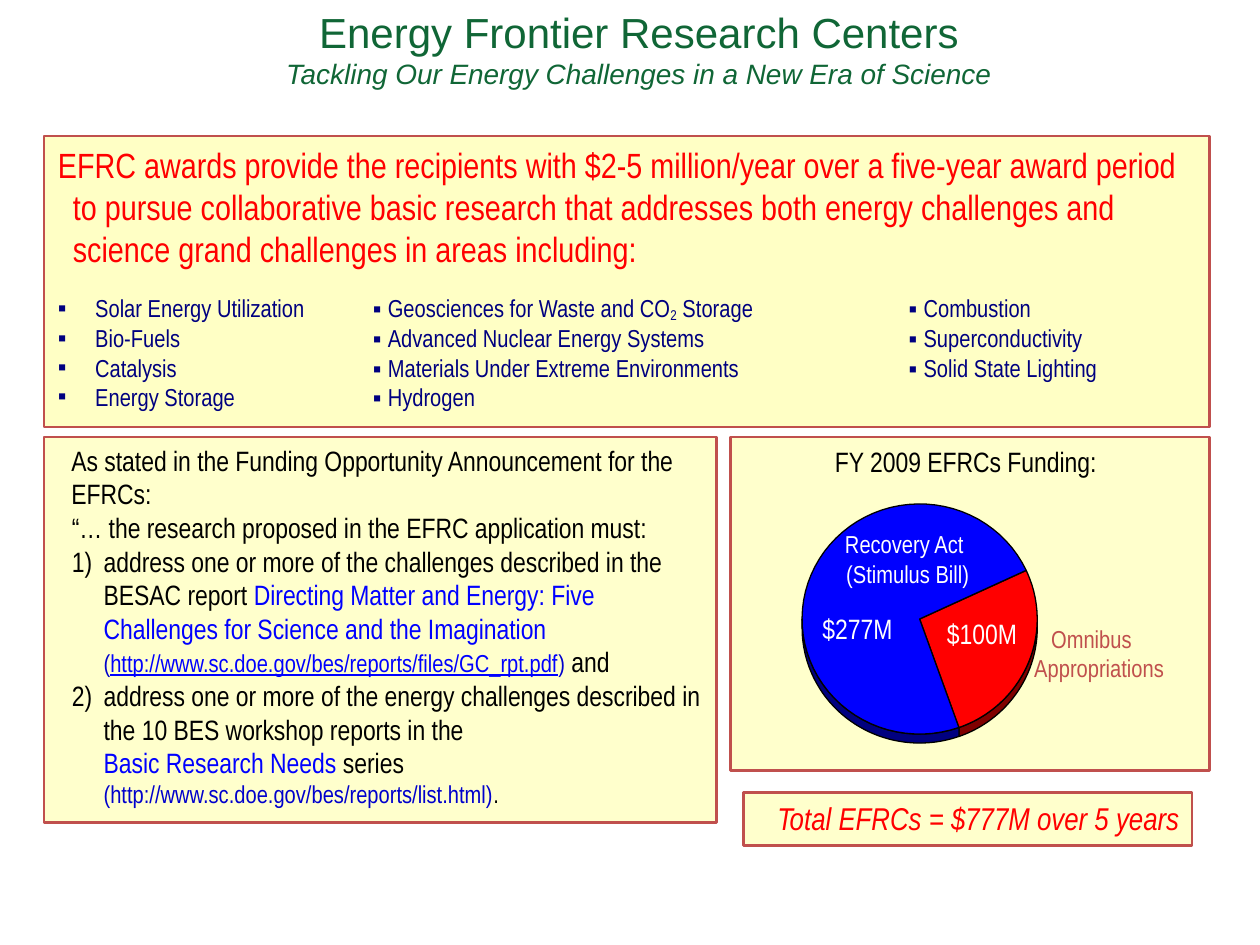
from dataclasses import dataclass
from math import cos, radians, sin

from lxml import etree
from pptx import Presentation
from pptx.dml.color import RGBColor
from pptx.enum.shapes import MSO_SHAPE
from pptx.enum.text import MSO_ANCHOR, PP_ALIGN
from pptx.oxml.ns import qn
from pptx.util import Cm, Pt

RECT = MSO_SHAPE.RECTANGLE
TOP = MSO_ANCHOR.TOP
LEFT, MID, RIGHT = PP_ALIGN.LEFT, PP_ALIGN.CENTER, PP_ALIGN.RIGHT
NARROW, SERIF = "Arial Narrow", "Times New Roman"
HEX = {
    "cream": "FFFFCC", "pale": "FFFFC5", "brick": "C0504D", "green": "106636",
    "red": "FF0000", "maroon": "800000", "navy": "000080", "blue": "0000FF",
    "link": "0000CC", "black": "000000", "white": "FFFFFF",
}


@dataclass
class Bit:
    """A run; None keeps the font of its paragraph."""
    text: str
    color: str | None = None
    size: float | None = None
    face: str | None = None
    under: bool = False
    base: int = 0


@dataclass
class Para:
    bits: list[Bit]
    size: float
    color: str
    face: str = NARROW
    align: PP_ALIGN = LEFT
    italic: bool = False
    margin: float = 0
    indent: float = 0
    before: float = 0
    mark: str = ""
    tabs: tuple[float, ...] = ()


@dataclass
class Box:
    left: float
    top: float
    width: float
    height: float


def rgb(name: str) -> RGBColor:
    return RGBColor.from_string(HEX[name])


def add_mark(props, para: Para) -> None:
    if para.mark == "1)":
        etree.SubElement(props, qn("a:buAutoNum"), type="arabicParenR")
    elif para.mark:
        tint = etree.SubElement(props, qn("a:buClr"))
        etree.SubElement(tint, qn("a:srgbClr"), val=HEX[para.color])
        etree.SubElement(props, qn("a:buFont"), typeface=SERIF)
        etree.SubElement(props, qn("a:buChar"), char=para.mark)


def add_tabs(props, stops: tuple[float, ...]) -> None:
    if stops:
        tabs = etree.SubElement(props, qn("a:tabLst"))
        for stop in stops:
            etree.SubElement(tabs, qn("a:tab"), pos=str(Cm(stop)), algn="l")


def add_bit(line, bit: Bit) -> None:
    if bit.text == "\n":
        line.add_line_break()
        return
    run = line.add_run()
    run.text = bit.text
    if bit.color:
        run.font.color.rgb = rgb(bit.color)
    if bit.size:
        run.font.size = Pt(bit.size)
    if bit.face:
        run.font.name = bit.face
    if bit.under:
        run.font.underline = True
    if bit.base:
        run._r.get_or_add_rPr().set("baseline", str(bit.base * 1000))


def write(shape, paras: list[Para], pad: tuple[float, float] = (0.25, 0.13)) -> None:
    frame = shape.text_frame
    frame.word_wrap = True
    frame.vertical_anchor = TOP
    frame.margin_left = frame.margin_right = Cm(pad[0])
    frame.margin_top = frame.margin_bottom = Cm(pad[1])
    for i, para in enumerate(paras):
        line = frame.add_paragraph() if i else frame.paragraphs[0]
        props = line._p.get_or_add_pPr()
        props.set("marL", str(Cm(para.margin)))
        props.set("indent", str(Cm(para.indent)))
        add_mark(props, para)
        add_tabs(props, para.tabs)
        line.alignment = para.align
        if para.before:
            line.space_before = Pt(para.before)
        line.font.name = para.face
        line.font.size = Pt(para.size)
        line.font.italic = para.italic
        line.font.color.rgb = rgb(para.color)
        for bit in para.bits:
            add_bit(line, bit)


def paint(shape, fill: str, edge: str, width: float) -> None:
    shape.shadow.inherit = False
    shape.fill.solid()
    shape.fill.fore_color.rgb = rgb(fill)
    shape.line.color.rgb = rgb(edge)
    shape.line.width = Pt(width)


def panel(slide, box: Box, fill: str = "cream"):
    shape = slide.shapes.add_shape(
        RECT, Cm(box.left), Cm(box.top), Cm(box.width), Cm(box.height))
    paint(shape, fill, "brick", 1.5)
    return shape


def label(slide, box: Box, paras: list[Para]) -> None:
    write(slide.shapes.add_textbox(
        Cm(box.left), Cm(box.top), Cm(box.width), Cm(box.height)), paras)


# Pie geometry: centre, radii, depth of the rim
PIE_X, PIE_Y, RAD_X, RAD_Y, DEEP = 18.54, 12.48, 2.37, 2.32, 0.18


def arc(start: float, end: float, drop: float = 0) -> list[tuple[int, int]]:
    steps = 60
    turns = [radians(start + (end - start) * i / steps) for i in range(steps + 1)]
    return [(Cm(PIE_X + RAD_X * cos(t)), Cm(PIE_Y + drop + RAD_Y * sin(t)))
            for t in turns]


def outline(slide, points: list[tuple[int, int]], fill: str) -> None:
    form = slide.shapes.build_freeform(*points[0], scale=1.0)
    form.add_line_segments(points[1:], close=True)
    paint(form.convert_to_shape(), fill, "black", 0.75)


def pie(slide) -> None:
    first = -25.0
    cut = first + 360 * 100 / (100 + 277)
    hub = [(Cm(PIE_X), Cm(PIE_Y))]
    for start, end, rim, face, edge in (
            (first, cut, 0, "red", "maroon"), (cut, first + 360, 180, "blue", "navy")):
        low, high = (rim, cut)
        outline(slide, arc(low, high) + arc(high, low, DEEP), edge)
        outline(slide, arc(start, end) + hub, face)


def main() -> None:
    deck = Presentation()
    deck.slide_width, deck.slide_height = Cm(25.4), Cm(19.05)
    slide = deck.slides.add_slide(deck.slide_layouts[6])

    # Awards and research areas
    rows = [
        ("Solar Energy Utilization", "Geosciences for Waste and CO2 Storage", "Combustion"),
        ("Bio-Fuels", "Advanced Nuclear Energy Systems", "Superconductivity"),
        ("Catalysis", "Materials Under Extreme Environments", "Solid State Lighting"),
        ("Energy Storage", "Hydrogen"),
    ]
    paras = [Para([Bit(
        "EFRC awards provide the recipients with $2-5 million/year over a five-year "
        "award period to pursue collaborative basic research that addresses both energy "
        "challenges and science grand challenges in areas including:")],
        20, "red", margin=0.3, indent=-0.3)]
    for i, (area, *others) in enumerate(rows):
        bits = [Bit(area)]
        for other in others:
            head, sub, tail = other.partition("2")
            bits += [Bit("\t"), Bit("▪ ", face=SERIF), Bit(head)]
            if sub:
                bits += [Bit(sub, base=-12), Bit(tail)]
        paras.append(Para(bits, 14, "navy", margin=0.75, indent=-0.75, mark="▪",
                          before=0 if i else 13.5, tabs=(6.35, 17.15)))
    write(panel(slide, Box(0.89, 2.74, 23.5, 5.87), "pale"), paras, (0.28, 0.15))

    # Title
    label(slide, Box(5.44, 0, 14.88, 1.96), [
        Para([Bit("Energy Frontier Research Centers")], 24, "green", "Arial", MID),
        Para([Bit("Tackling Our Energy Challenges in a New Era of Science")],
             16, "green", "Arial", MID, True)])

    # Requirements
    hang = {"size": 16, "color": "black", "margin": 0.95, "indent": -0.64}
    write(panel(slide, Box(0.89, 8.81, 13.56, 7.77)), [
        Para([Bit("As stated in the Funding Opportunity Announcement for the EFRCs:")],
             16, "black", margin=0.3),
        Para([Bit("“… the research proposed in the EFRC application must:")], **hang),
        Para([Bit("address one or more of the challenges described in the BESAC report "),
              Bit("Directing Matter and Energy: Five Challenges for Science and the "
                  "Imagination ", "blue"),
              Bit("(", "link", 14),
              Bit("http://www.sc.doe.gov/bes/reports/files/GC_rpt.pdf", "blue", 14,
                  under=True),
              Bit(")", "link", 14), Bit(" and")], mark="1)", **hang),
        Para([Bit("address one or more of the energy challenges described in the 10 BES "
                  "workshop reports in the "),
              Bit("\n"), Bit("Basic Research Needs", "blue"), Bit(" series "),
              Bit("(http://www.sc.doe.gov/bes/reports/list.html)", "link", 14),
              Bit(".", size=14)], mark="1)", **hang)])

    # Funding pie and its labels
    panel(slide, Box(14.73, 8.81, 9.65, 6.73))
    label(slide, Box(14.94, 8.84, 9.19, 0.94),
          [Para([Bit("FY 2009 EFRCs Funding: ")], 16, "black", align=MID)])
    pie(slide)
    label(slide, Box(20.6, 12.45, 3.53, 1.7), [
        Para([Bit("Omnibus")], 14, "brick", margin=0.34),
        Para([Bit("Appropriations")], 14, "brick")])
    label(slide, Box(16.54, 10.54, 3.25, 1.68), [
        Para([Bit(text)], 14, "white", align=RIGHT)
        for text in ("Recovery Act ", "(Stimulus Bill)")])
    for text, left, top in (("$277M", 16.11, 12.19), ("$100M", 18.62, 12.29)):
        label(slide, Box(left, top, 2.13, 1.09),
              [Para([Bit(text)], 16, "white", align=RIGHT)])

    # Total
    write(panel(slide, Box(14.99, 15.98, 9.04, 1.07)), [
        Para([Bit("Total EFRCs = $777M over 5 years")], 18, "red", align=RIGHT,
             italic=True)])
    deck.save("out.pptx")


if __name__ == "__main__":
    main()
